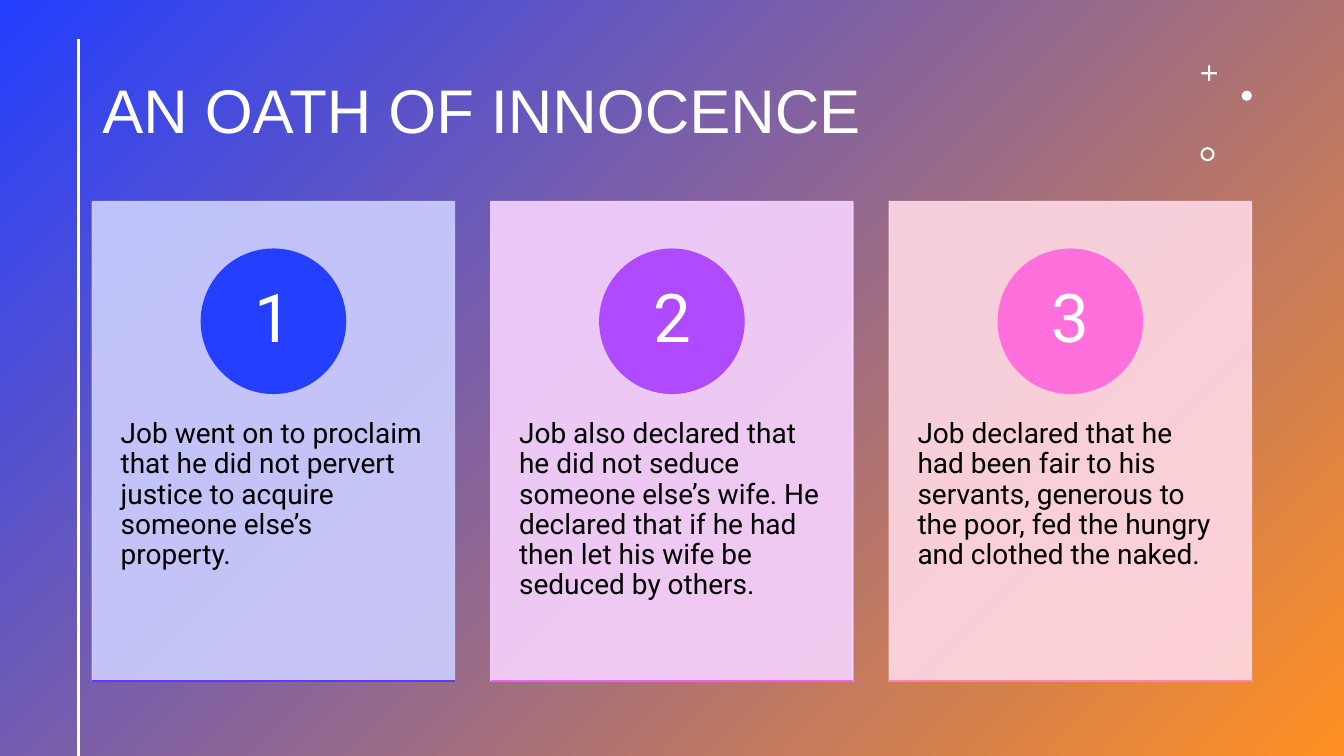
import lxml.etree
import pptx
import pptx.util
import pptx.dml.color
import pptx.enum.shapes
import pptx.enum.text
import pptx.oxml.ns

Pt = pptx.util.Pt
qn = pptx.oxml.ns.qn
SHAPES = pptx.enum.shapes.MSO_SHAPE
ALIGN = pptx.enum.text.PP_ALIGN
ANCHOR = pptx.enum.text.MSO_ANCHOR

# Content
TITLE = "AN OATH OF INNOCENCE"
CARDS = [
    ("1", "Job went on to proclaim that he did not pervert justice to acquire "
          "someone else’s property.", "blue", "pale_blue", "blue_edge"),
    ("2", "Job also declared that he did not seduce someone else’s wife. He "
          "declared that if he had then let his wife be seduced by others.",
     "purple", "pale_purple", "purple_edge"),
    ("3", "Job declared that he had been fair to his servants, generous to the "
          "poor, fed the hungry and clothed the naked.",
     "pink", "pale_pink", "pink_edge"),
]
COLORS = {
    "white": "FFFFFF", "black": "000000", "orange": "FF9022",
    "blue": "243FFF", "pale_blue": "CDCFFF", "blue_edge": "6337FF",
    "purple": "B04AFF", "pale_purple": "F7D3FF", "purple_edge": "EF5DFF",
    "pink": "FF70DC", "pale_pink": "FFD9E6", "pink_edge": "FF83B6",
}
# Ornaments: shape, left, top, size, adjustment
ORNAMENTS = [
    (SHAPES.CROSS, 858.2, 46.8, 11, 0.43),
    (SHAPES.OVAL, 887, 64.8, 7.2, None),
    (SHAPES.DONUT, 857.5, 105.1, 10.1, 0.15),
]

# Layout
WIDTH, HEIGHT = 960, 540
CARD_LEFT, CARD_TOP, CARD_WIDTH, CARD_HEIGHT = 66, 144, 258.7, 342.5
CARD_STEP = 284.6
CIRCLE_TOP, CIRCLE_SIZE = 178, 103
BODY_TOP, BODY_HEIGHT = 273.6, 206
RULE_X, RULE_TOP = 56.2, 28


def rgb(name):
    return pptx.dml.color.RGBColor.from_string(COLORS[name])


def add_shape(kind, left, top, width, height, color, outlined=False):
    shape = slide.shapes.add_shape(kind, Pt(left), Pt(top), Pt(width), Pt(height))
    shape.shadow.inherit = False
    shape.fill.solid()
    shape.fill.fore_color.rgb = rgb(color)
    if outlined:
        shape.line.color.rgb = rgb(color)
        shape.line.width = Pt(1)
    else:
        shape.line.fill.background()
    return shape


def set_opacity(shape, percent):
    for color in shape._element.spPr.findall(".//" + qn("a:srgbClr")):
        lxml.etree.SubElement(color, qn("a:alpha"), val=str(percent * 1000))


def add_line(left, top, right, bottom, color, weight):
    line = slide.shapes.add_connector(
        pptx.enum.shapes.MSO_CONNECTOR.STRAIGHT,
        Pt(left), Pt(top), Pt(right), Pt(bottom))
    line.line.color.rgb = rgb(color)
    line.line.width = Pt(weight)
    lxml.etree.SubElement(line._element.spPr, qn("a:effectLst"))


def write(shape, text, size, font, color, align, anchor, inset_x, inset_y):
    frame = shape.text_frame
    frame.word_wrap = True
    frame.vertical_anchor = anchor
    frame.margin_left = frame.margin_right = Pt(inset_x)
    frame.margin_top = frame.margin_bottom = Pt(inset_y)
    para = frame.paragraphs[0]
    para.alignment = align
    para.line_spacing = 0.9
    span = para.add_run()
    span.text = text
    span.font.size = Pt(size)
    span.font.name = font
    span.font.color.rgb = rgb(color)


def add_text(left, top, width, height, *style):
    box = slide.shapes.add_textbox(Pt(left), Pt(top), Pt(width), Pt(height))
    write(box, *style)


deck = pptx.Presentation()
deck.slide_width, deck.slide_height = Pt(WIDTH), Pt(HEIGHT)
slide = deck.slides.add_slide(deck.slide_layouts[6])

# Gradient backdrop
backdrop = add_shape(SHAPES.RECTANGLE, 0, 0, WIDTH, HEIGHT, "blue")
backdrop.fill.gradient()
backdrop.fill.gradient_angle = 315
for stop, color, position in zip(backdrop.fill.gradient_stops, ("blue", "orange"), (0, 1)):
    stop.color.rgb = rgb(color)
    stop.position = position

# Title and vertical rule
add_text(CARD_LEFT, 28.8, 772, 104.4, TITLE, 44, "Arial", "white",
         ALIGN.LEFT, ANCHOR.MIDDLE, 7.2, 3.6)
add_line(RULE_X, RULE_TOP, RULE_X, HEIGHT, "white", 2)

# Corner ornaments
for kind, left, top, size, adjustment in ORNAMENTS:
    ornament = add_shape(kind, left, top, size, size, "white")
    if adjustment is not None:
        ornament.adjustments[0] = adjustment

# Numbered cards
for index, (number, body, accent, panel_color, edge) in enumerate(CARDS):
    left = CARD_LEFT + index * CARD_STEP
    bottom = CARD_TOP + CARD_HEIGHT
    panel = add_shape(SHAPES.RECTANGLE, left, CARD_TOP, CARD_WIDTH, CARD_HEIGHT,
                      panel_color, outlined=True)
    set_opacity(panel, 90)
    add_text(left, BODY_TOP, CARD_WIDTH, BODY_HEIGHT, body, 20, "Roboto", "black",
             ALIGN.LEFT, ANCHOR.TOP, 20.2, 26)
    circle = add_shape(SHAPES.OVAL, left + (CARD_WIDTH - CIRCLE_SIZE) / 2, CIRCLE_TOP,
                       CIRCLE_SIZE, CIRCLE_SIZE, accent, outlined=True)
    write(circle, number, 48, "Roboto", "white", ALIGN.CENTER, ANCHOR.MIDDLE, 8, 1)
    add_line(left, bottom, left + CARD_WIDTH, bottom, edge, 1)

deck.save("out.pptx")
